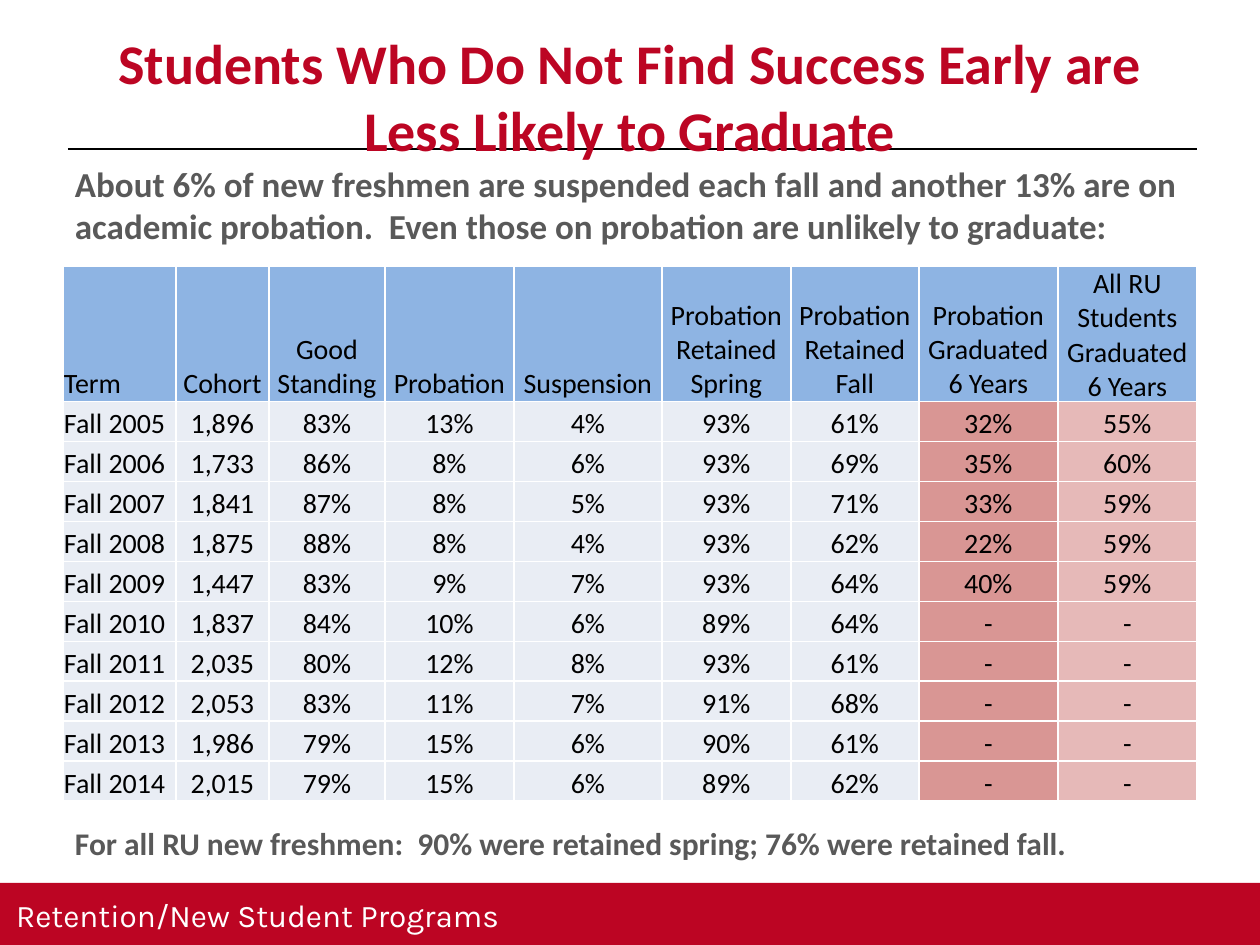
from copy import deepcopy
from dataclasses import dataclass

from lxml import etree
from pptx import Presentation
from pptx import util as u
from pptx.dml.color import RGBColor
from pptx.enum import shapes, text
from pptx.oxml import ns

EMU_PER_PX = 914400 / 126


@dataclass(frozen=True)
class Theme:
    red: str = "BC0523"
    grey: str = "595959"
    black: str = "000000"
    white: str = "FFFFFF"
    header: str = "8EB4E3"
    body: str = "E9EDF4"
    probation: str = "D99694"
    all_students: str = "E6B9B8"
    font: str = "Calibri"
    footer_font: str = "Karla"
    title_size: int = 32
    lead_size: int = 20
    note_size: int = 18
    table_size: int = 16


@dataclass(frozen=True)
class TextBlock:
    words: str
    left: int
    top: int
    width: int
    height: int
    size: int
    color: str
    font: str = Theme.font
    bold: bool = True
    align: text.PP_ALIGN = text.PP_ALIGN.LEFT
    inset_top: int = 6
    inset_right: int = 12


@dataclass(frozen=True)
class Column:
    heading: str
    width: int
    fill: str = Theme.body
    align: text.PP_ALIGN = text.PP_ALIGN.CENTER


THEME = Theme()

TEXT_BLOCKS = [
    TextBlock("Students Who Do Not Find Success Early are Less Likely to Graduate",
              63, 18, 1134, 160, THEME.title_size, THEME.red,
              align=text.PP_ALIGN.CENTER, inset_top=10),
    TextBlock("About 6% of new freshmen are suspended each fall and another 13% are on "
              "academic probation.  Even those on probation are unlikely to graduate:",
              63, 156, 1134, 662, THEME.lead_size, THEME.grey),
    TextBlock("For all RU new freshmen:  90% were retained spring; 76% were retained fall.",
              63, 818, 1134, 43, THEME.note_size, THEME.grey),
    TextBlock("Retention/New Student Programs", 4, 890, 509, 60, THEME.note_size,
              THEME.white, font=THEME.footer_font, bold=False, inset_right=0),
]

COLUMNS = [
    Column("Term", 113, align=text.PP_ALIGN.LEFT),
    Column("Cohort", 93),
    Column("Good\nStanding", 116),
    Column("Probation", 129),
    Column("Suspension", 148),
    Column("Probation\nRetained\nSpring", 129),
    Column("Probation\nRetained\nFall", 128),
    Column("Probation Graduated\n6 Years", 139, THEME.probation),
    Column("All RU Students Graduated 6 Years", 139, THEME.all_students),
]

ROWS = [
    ("Fall 2005", "1,896", "83%", "13%", "4%", "93%", "61%", "32%", "55%"),
    ("Fall 2006", "1,733", "86%", "8%", "6%", "93%", "69%", "35%", "60%"),
    ("Fall 2007", "1,841", "87%", "8%", "5%", "93%", "71%", "33%", "59%"),
    ("Fall 2008", "1,875", "88%", "8%", "4%", "93%", "62%", "22%", "59%"),
    ("Fall 2009", "1,447", "83%", "9%", "7%", "93%", "64%", "40%", "59%"),
    ("Fall 2010", "1,837", "84%", "10%", "6%", "89%", "64%", "-", "-"),
    ("Fall 2011", "2,035", "80%", "12%", "8%", "93%", "61%", "-", "-"),
    ("Fall 2012", "2,053", "83%", "11%", "7%", "91%", "68%", "-", "-"),
    ("Fall 2013", "1,986", "79%", "15%", "6%", "90%", "61%", "-", "-"),
    ("Fall 2014", "2,015", "79%", "15%", "6%", "89%", "62%", "-", "-"),
]


def px(length: int) -> u.Emu:
    return u.Emu(round(length * EMU_PER_PX))


def apply(target, values: dict) -> None:
    for name, value in values.items():
        setattr(target, name, value)


def fill_solid(target, color: str) -> None:
    target.fill.solid()
    target.fill.fore_color.rgb = RGBColor.from_string(color)


def write(paragraph, words: str, align, color: str, font_values: dict) -> None:
    paragraph.text = words
    paragraph.alignment = align
    for run in paragraph.runs:
        apply(run.font, font_values)
        run.font.color.rgb = RGBColor.from_string(color)
    # Line breaks take the type size of the runs around them
    for line_break in paragraph._p.findall(ns.qn("a:br")):
        line_break.insert(0, deepcopy(paragraph.runs[0]._r.rPr))


def add_text(slide, block: TextBlock) -> None:
    box = slide.shapes.add_textbox(*map(px, (block.left, block.top, block.width, block.height)))
    apply(box.text_frame, {
        "word_wrap": True, "vertical_anchor": text.MSO_ANCHOR.TOP,
        "margin_left": px(12), "margin_right": px(block.inset_right),
        "margin_top": px(block.inset_top), "margin_bottom": px(6),
    })
    write(box.text_frame.paragraphs[0], block.words, block.align, block.color,
          {"name": block.font, "size": u.Pt(block.size), "bold": block.bold})


def add_borders(cell) -> None:
    properties = cell._tc.get_or_add_tcPr()
    for side in ("lnL", "lnR", "lnT", "lnB"):
        line = etree.SubElement(properties, ns.qn(f"a:{side}"), w=str(u.Pt(1)))
        solid = etree.SubElement(line, ns.qn("a:solidFill"))
        etree.SubElement(solid, ns.qn("a:srgbClr"), val=THEME.white)


def format_cell(cell, words: str, column: Column, fill: str) -> None:
    apply(cell, {
        "margin_left": px(1), "margin_right": px(1), "margin_top": px(1),
        "margin_bottom": 0, "vertical_anchor": text.MSO_ANCHOR.BOTTOM,
    })
    write(cell.text_frame.paragraphs[0], words, column.align, THEME.black,
          {"name": THEME.font, "size": u.Pt(THEME.table_size), "bold": False})
    add_borders(cell)
    fill_solid(cell, fill)


def add_retention_table(slide, left: int, top: int, header_height: int, row_height: int) -> None:
    width = sum(column.width for column in COLUMNS)
    height = header_height + row_height * len(ROWS)
    table = slide.shapes.add_table(len(ROWS) + 1, len(COLUMNS),
                                   *map(px, (left, top, width, height))).table
    apply(table, {"first_row": False, "horz_banding": False})
    for row in table.rows:
        row.height = px(row_height)
    table.rows[0].height = px(header_height)
    for index, column in enumerate(COLUMNS):
        table.columns[index].width = px(column.width)
        format_cell(table.cell(0, index), column.heading, column, THEME.header)
        for row_index, values in enumerate(ROWS, start=1):
            format_cell(table.cell(row_index, index), values[index], column, column.fill)


def main() -> None:
    presentation = Presentation()
    apply(presentation, {"slide_width": px(1260), "slide_height": px(945)})
    slide = presentation.slides.add_slide(presentation.slide_layouts[6])

    # Rule under the title
    rule = slide.shapes.add_connector(shapes.MSO_CONNECTOR.STRAIGHT,
                                      *map(px, (68, 149, 1197, 149)))
    rule.line.width = u.Pt(0.75)
    rule.line.color.rgb = RGBColor.from_string(THEME.black)
    etree.SubElement(rule._element.spPr, ns.qn("a:effectLst"))

    # Footer band
    band = slide.shapes.add_shape(shapes.MSO_SHAPE.RECTANGLE, *map(px, (0, 883, 1260, 62)))
    band.shadow.inherit = False
    fill_solid(band, THEME.red)
    band.line.fill.background()

    # Title, lead, note and footer text
    for block in TEXT_BLOCKS:
        add_text(slide, block)

    # Retention by cohort
    add_retention_table(slide, 63, 266, header_height=126, row_height=40)

    presentation.save("out.pptx")


if __name__ == "__main__":
    main()
